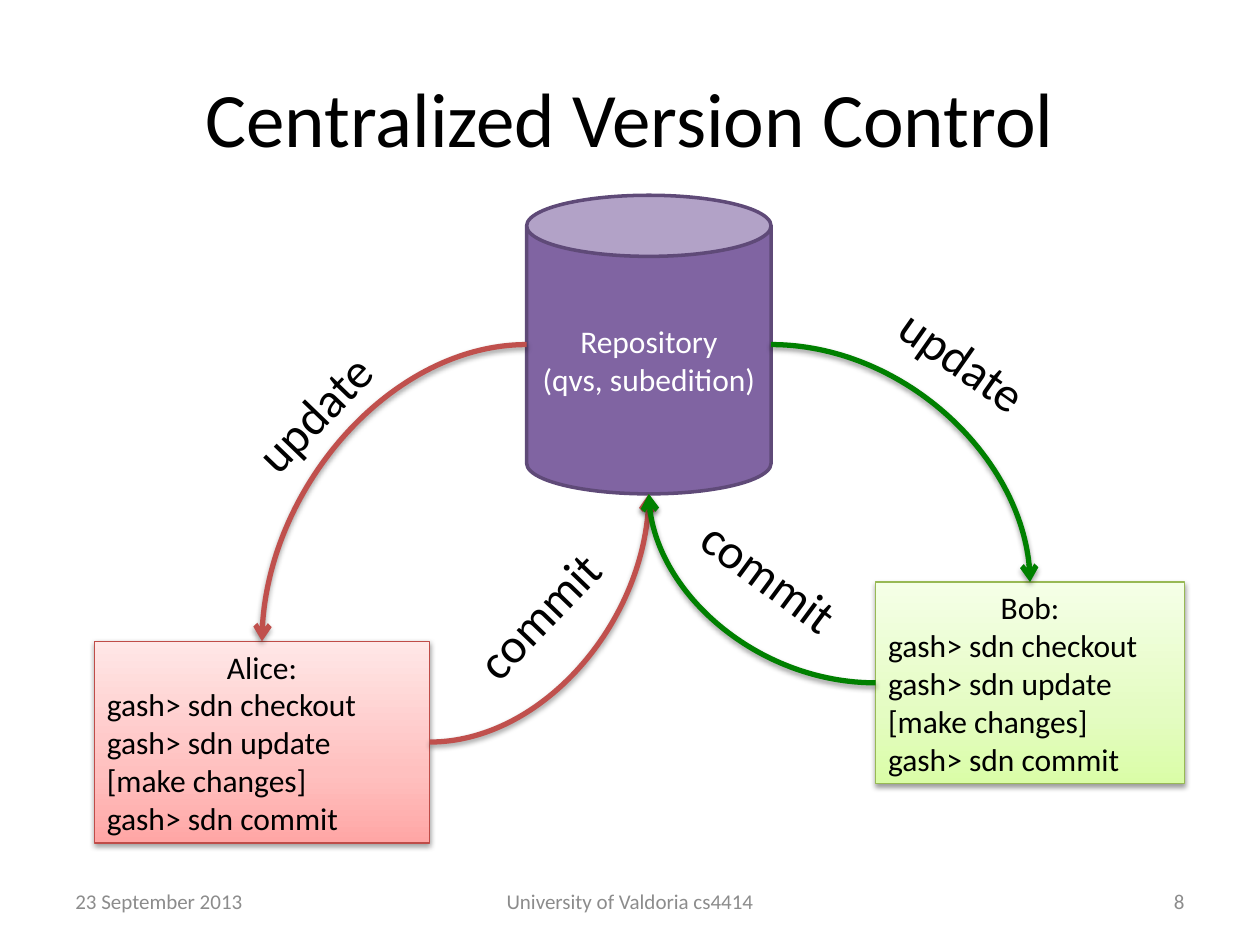
import copy

import lxml.etree
import pptx
import pptx.dml.color
import pptx.enum.shapes
import pptx.enum.text
import pptx.oxml.ns
import pptx.util

Inches = pptx.util.Inches
Pt = pptx.util.Pt
RGBColor = pptx.dml.color.RGBColor
ALIGN = pptx.enum.text.PP_ALIGN
ANCHOR = pptx.enum.text.MSO_ANCHOR
SHAPE = pptx.enum.shapes.MSO_SHAPE
qn = pptx.oxml.ns.qn

BLACK = RGBColor(0x00, 0x00, 0x00)
WHITE = RGBColor(0xFF, 0xFF, 0xFF)
FOOTER_GRAY = RGBColor(0x8C, 0x8C, 0x8C)
PURPLE = RGBColor(0x80, 0x64, 0xA2)
PURPLE_EDGE = RGBColor(0x5F, 0x4A, 0x78)
RED = RGBColor(0xC0, 0x50, 0x4D)
RED_EDGE = RGBColor(0xBF, 0x4C, 0x48)
RED_STOPS = (RGBColor(0xFF, 0xA6, 0xA5), RGBColor(0xFF, 0xC0, 0xBF), RGBColor(0xFF, 0xE7, 0xE7))
GREEN = RGBColor(0x00, 0x80, 0x00)
GREEN_EDGE = RGBColor(0x98, 0xB9, 0x55)
GREEN_STOPS = (RGBColor(0xDA, 0xFD, 0xA7), RGBColor(0xE4, 0xFC, 0xC2), RGBColor(0xF5, 0xFF, 0xE7))
STOP_POSITIONS = (0, 0.35, 1)

FONT = "Calibri"
COMMANDS = ["gash> sdn checkout", "gash> sdn update", "[make changes]", "gash> sdn commit"]


def write_lines(frame, lines, size, color, align):
    frame.text = "\n".join(lines)
    for paragraph in frame.paragraphs:
        paragraph.alignment = align
        paragraph.font.name = FONT
        paragraph.font.size = Pt(size)
        paragraph.font.color.rgb = color


def add_soft_shadow(properties):
    for inherited in properties.findall(qn("a:effectLst")):
        properties.remove(inherited)
    effects = lxml.etree.SubElement(properties, qn("a:effectLst"))
    shadow = lxml.etree.SubElement(
        effects, qn("a:outerShdw"), blurRad="40000", dist="20000", dir="5400000", rotWithShape="0"
    )
    tint = lxml.etree.SubElement(shadow, qn("a:srgbClr"), val="000000")
    lxml.etree.SubElement(tint, qn("a:alpha"), val="38000")


def place_title(slide, box):
    title = slide.shapes.title
    title.left, title.top, title.width, title.height = map(Inches, box)
    title.text_frame.vertical_anchor = ANCHOR.MIDDLE
    write_lines(title.text_frame, ["Centralized Version Control"], 44, BLACK, ALIGN.CENTER)


def place_footer(slide, box):
    left, top, width, height = box
    side, middle = 2.33, 3.17
    parts = [
        ("23 September 2013", left, side, ALIGN.LEFT),
        ("University of Valdoria cs4414", left + (width - middle) / 2, middle, ALIGN.CENTER),
        ("8", left + width - side, side, ALIGN.RIGHT),
    ]
    for text, x, part_width, align in parts:
        part = slide.shapes.add_textbox(Inches(x), Inches(top), Inches(part_width), Inches(height))
        part.text_frame.word_wrap = True
        part.text_frame.vertical_anchor = ANCHOR.MIDDLE
        write_lines(part.text_frame, [text], 12, FOOTER_GRAY, align)


def place_repository(slide, box):
    repository = slide.shapes.add_shape(SHAPE.CAN, *map(Inches, box))
    repository.shadow.inherit = False
    repository.fill.solid()
    repository.fill.fore_color.rgb = PURPLE
    repository.line.color.rgb = PURPLE_EDGE
    repository.line.width = Pt(2)
    frame = repository.text_frame
    frame.word_wrap = True
    frame.vertical_anchor = ANCHOR.MIDDLE
    write_lines(frame, ["Repository", "(qvs, subedition)"], 18, WHITE, ALIGN.CENTER)


def place_developer(slide, box, name, stop_colors, edge):
    developer = slide.shapes.add_shape(SHAPE.RECTANGLE, *map(Inches, box))
    fill = developer.fill
    fill.gradient()
    fill.gradient_angle = 90
    properties = developer._element.spPr
    first_stop = properties.find(".//" + qn("a:gs"))
    first_stop.addnext(copy.deepcopy(first_stop))
    for stop, position, color in zip(fill.gradient_stops, STOP_POSITIONS, stop_colors):
        stop.position = position
        stop.color.rgb = color
    developer.line.color.rgb = edge
    developer.line.width = Pt(0.75)
    add_soft_shadow(properties)
    frame = developer.text_frame
    frame.word_wrap = True
    frame.vertical_anchor = ANCHOR.MIDDLE
    write_lines(frame, [f"{name}:"] + COMMANDS, 18, BLACK, ALIGN.LEFT)
    frame.paragraphs[0].alignment = ALIGN.CENTER


def place_arrow(slide, start, end, color):
    arrow = slide.shapes.add_connector(
        pptx.enum.shapes.MSO_CONNECTOR.CURVE, *map(Inches, start + end)
    )
    arrow.line.color.rgb = color
    arrow.line.width = Pt(3)
    properties = arrow._element.spPr
    properties.find(qn("a:prstGeom")).set("prst", "curvedConnector2")
    lxml.etree.SubElement(properties.find(qn("a:ln")), qn("a:tailEnd"), type="arrow")
    add_soft_shadow(properties)


def place_label(slide, box, text, rotation):
    label = slide.shapes.add_textbox(*map(Inches, box))
    label.rotation = rotation
    label.text_frame.word_wrap = False
    label.text_frame.auto_size = pptx.enum.text.MSO_AUTO_SIZE.SHAPE_TO_FIT_TEXT
    write_lines(label.text_frame, [text], 28, BLACK, ALIGN.LEFT)


def place_exchange(slide, repository, developer, color):
    left, top, width, height = repository
    dev_left, dev_top, dev_width, dev_height = developer
    on_left = dev_left < left
    repository_side = (left if on_left else left + width, top + height / 2)
    repository_bottom = (left + width / 2, top + height)
    developer_top = (dev_left + dev_width / 2, dev_top)
    developer_side = (dev_left + dev_width if on_left else dev_left, dev_top + dev_height / 2)
    place_arrow(slide, repository_side, developer_top, color)
    place_arrow(slide, developer_side, repository_bottom, color)


def main():
    deck = pptx.Presentation()
    deck.slide_width, deck.slide_height = Inches(10), Inches(7.5)
    slide = deck.slides.add_slide(deck.slide_layouts[5])

    repository = (4.18, 1.55, 1.94, 2.37)
    alice = (0.75, 5.09, 2.66, 1.6)
    bob = (6.95, 4.62, 2.45, 1.6)

    place_title(slide, (0.5, 0.3, 9, 1.25))
    place_footer(slide, (0.5, 6.95, 9, 0.4))
    place_repository(slide, repository)
    place_developer(slide, alice, "Alice", RED_STOPS, RED_EDGE)
    place_developer(slide, bob, "Bob", GREEN_STOPS, GREEN_EDGE)
    place_exchange(slide, repository, alice, RED)
    place_exchange(slide, repository, bob, GREEN)
    place_label(slide, (1.83, 2.98, 1.34, 0.57), "update", 313.9)
    place_label(slide, (3.57, 4.59, 1.42, 0.57), "commit", 313.9)
    place_label(slide, (6.99, 2.58, 1.34, 0.57), "update", 35.1)
    place_label(slide, (5.41, 4.29, 1.42, 0.57), "commit", 36.5)

    deck.save("out.pptx")


if __name__ == "__main__":
    main()
